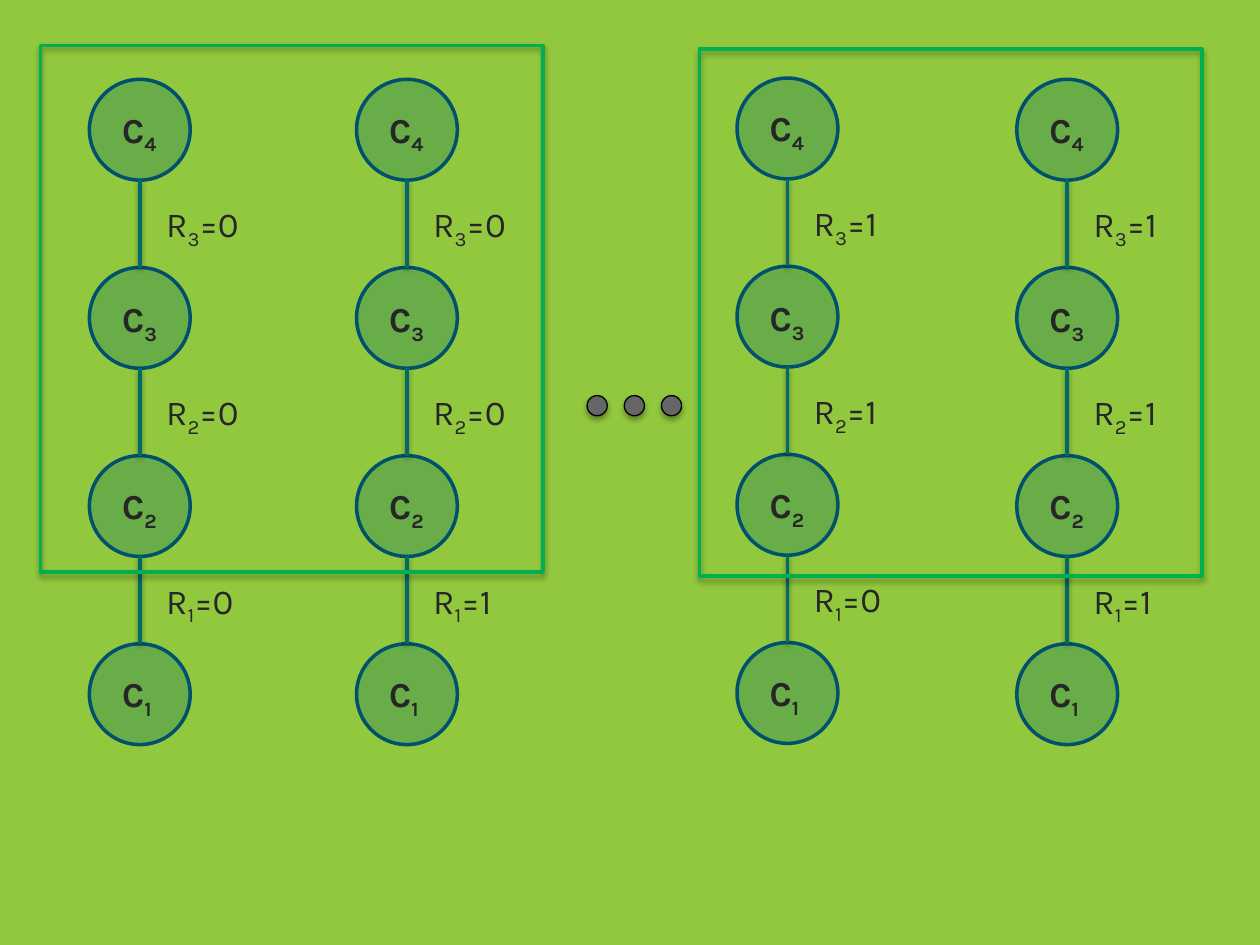
from lxml.etree import SubElement
from pptx import Presentation
from pptx.dml.color import RGBColor
from pptx.enum.shapes import MSO_CONNECTOR, MSO_SHAPE
from pptx.enum.text import MSO_AUTO_SIZE as AutoSize
from pptx.oxml.ns import qn
from pptx.util import Inches, Pt

COLORS = {
    "background": "92C83E",
    "node": "006969",
    "node_line": "00506E",
    "edge": "006969",
    "dot": "666666",
    "dot_line": "000000",
    "frame": "00B050",
    "text": "262626",
    "shadow": "000000",
}
FONT = "Karla"
NODE = 0.8
PITCH = 4.48 / 3
CHAINS = [
    (0.71, 0.63, (0, 0, 0)),
    (2.83, 0.63, (0, 0, 1)),
    (5.85, 0.62, (1, 1, 0)),
    (8.07, 0.63, (1, 1, 1)),
]
FRAMES = [(5.55, 0.39), (0.32, 0.36)]


def rgb(name):
    """Return the named colour."""
    return RGBColor.from_string(COLORS[name])


def set_line(sp, color, width):
    """Set the line colour and width in points."""
    sp.line.color.rgb = rgb(color)
    sp.line.width = Pt(width)


def add_alpha(parent, percent):
    """Give a colour element an opacity in percent."""
    SubElement(parent, qn("a:alpha")).set("val", str(percent * 1000))


def add_shadow(sp, distance, opacity):
    """Give a shape or connector a soft shadow straight below it."""
    effects = SubElement(sp._element.spPr, qn("a:effectLst"))
    shadow = SubElement(effects, qn("a:outerShdw"))
    settings = {"blurRad": Pt(3.15), "dist": Pt(distance), "dir": 5400000, "rotWithShape": 0}
    for key, value in settings.items():
        shadow.set(key, str(value))
    color = SubElement(shadow, qn("a:srgbClr"))
    color.set("val", COLORS["shadow"])
    add_alpha(color, opacity)


def add_outline(shapes, kind, x, y, w, h, line, width):
    """Add a preset shape with a coloured line."""
    sp = shapes.add_shape(kind, Inches(x), Inches(y), Inches(w), Inches(h))
    set_line(sp, line, width)
    return sp


def add_node(shapes, x, y):
    """Add a translucent circle."""
    sp = add_outline(shapes, MSO_SHAPE.OVAL, x, y, NODE, NODE, "node_line", 2)
    sp.shadow.inherit = False
    sp.fill.solid()
    sp.fill.fore_color.rgb = rgb("node")
    add_alpha(sp._element.spPr.find(qn("a:solidFill"))[0], 28)


def add_edge(shapes, x, top, bottom):
    """Add a vertical line between two nodes."""
    cxn = shapes.add_connector(
        MSO_CONNECTOR.STRAIGHT, Inches(x), Inches(top), Inches(x), Inches(bottom))
    set_line(cxn, "edge", 2)
    add_shadow(cxn, 1.57, 38)


def add_label(shapes, x, y, w, letter, index, suffix="", bold=False):
    """Add a letter with a subscript index and an optional suffix."""
    sp = shapes.add_textbox(Inches(x), Inches(y), Inches(w), Inches(0.44))
    tf = sp.text_frame
    tf.word_wrap = False
    tf.auto_size = AutoSize.SHAPE_TO_FIT_TEXT
    p = tf.paragraphs[0]
    for text, baseline in ((letter, 0), (str(index), -25000), (suffix, 0)):
        if text:
            r = p.add_run()
            r.text = text
            r.font.name = FONT
            r.font.size = Pt(20)
            r.font.bold = bold
            r.font.color.rgb = rgb("text")
            r._r.get_or_add_rPr().set("baseline", str(baseline))


def add_chain(slide, x, top, values):
    """Add a group of four linked nodes, with edge values from the top down."""
    shapes = slide.shapes.add_group_shape().shapes
    tops = [top + row * PITCH for row in range(4)]
    for row, value in enumerate(values):
        add_label(shapes, x + 0.51, tops[row] + 0.93, 0.8, "R", 3 - row, f"={value}")
    for y in tops:
        add_node(shapes, x, y)
    for upper, lower in zip(tops, tops[1:]):
        add_edge(shapes, x + NODE / 2, upper + NODE, lower)
    for row, y in enumerate(tops):
        lift = 0.19 if row == 1 else 0.18
        add_label(shapes, x + 0.16, y + lift, 0.49, "C", 4 - row, bold=True)


def add_ellipsis(slide):
    """Add a group of three dots."""
    shapes = slide.shapes.add_group_shape().shapes
    for i in range(3):
        sp = add_outline(
            shapes, MSO_SHAPE.OVAL, 4.66 + i * 0.295, 3.14, 0.16, 0.16, "dot_line", 0.75)
        sp.fill.solid()
        sp.fill.fore_color.rgb = rgb("dot")
        add_shadow(sp, 1.81, 35)


def add_frame(slide, x, y):
    """Add an unfilled frame around the upper nodes of two chains."""
    sp = add_outline(slide.shapes, MSO_SHAPE.RECTANGLE, x, y, 3.99, 4.18, "frame", 2)
    sp.fill.background()
    add_shadow(sp, 1.81, 35)


def main():
    """Build the slide and save it."""
    prs = Presentation()
    prs.slide_width, prs.slide_height = Inches(10), Inches(7.5)
    slide = prs.slides.add_slide(prs.slide_layouts[6])
    slide.background.fill.solid()
    slide.background.fill.fore_color.rgb = rgb("background")
    for x, top, values in CHAINS:
        add_chain(slide, x, top, values)
    add_ellipsis(slide)
    for x, y in FRAMES:
        add_frame(slide, x, y)
    prs.save("out.pptx")


if __name__ == "__main__":
    main()
